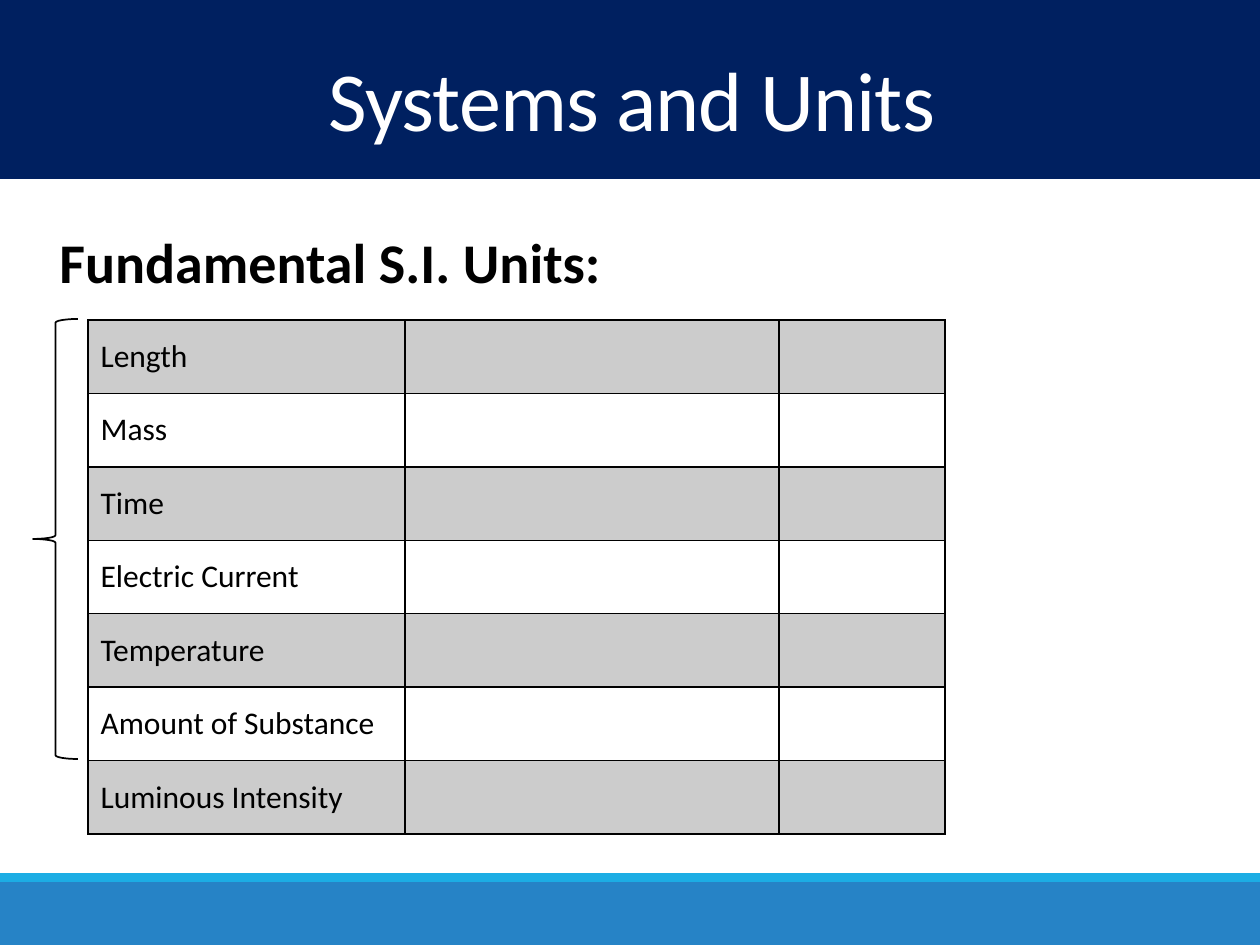
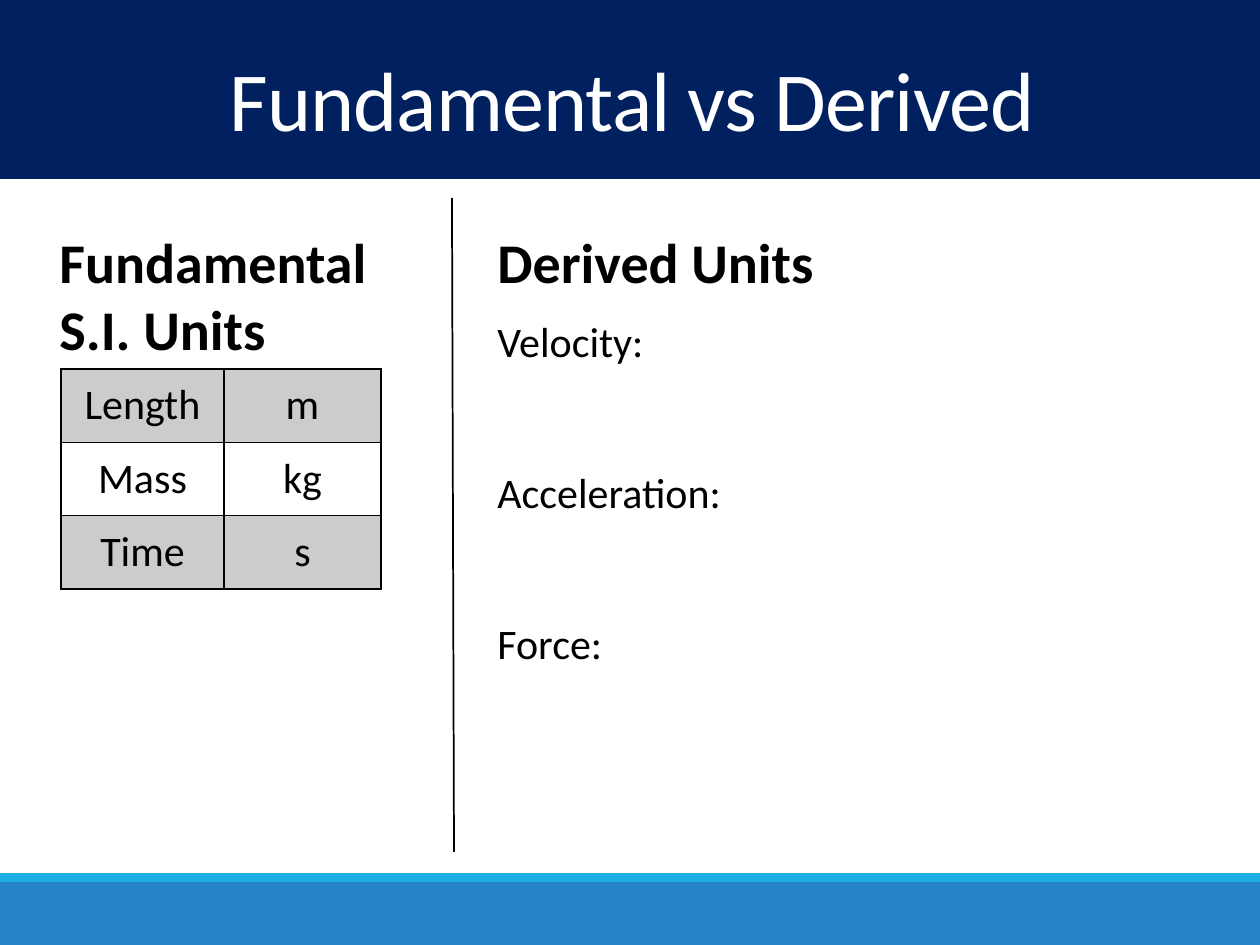
from collections import namedtuple
from dataclasses import dataclass
from itertools import product

from lxml import etree
from pptx import Presentation
from pptx.dml import color
from pptx.enum import shapes, text
from pptx.oxml import ns
from pptx import util as u

Box = namedtuple("Box", "left top width height")


@dataclass(frozen=True)
class Theme:
    font: str = "Calibri"
    navy: str = "002060"
    blue: str = "2683C6"
    sky: str = "1CADE4"
    white: str = "FFFFFF"
    ink: str = "000000"
    title_size: int = 48
    heading_size: int = 32
    body_size: int = 24
    label_size: int = 18
    stroke: int = 1
    shade_percent: int = 20


THEME = Theme()
PAGE = Box(0, 0, 1260, 945)


def px(length):
    return u.Emu(round(length * 914400 / 126))


def scaled(box):
    return [px(length) for length in box]


def rgb(value):
    return color.RGBColor.from_string(value)


def add_child(parent, tag, **attributes):
    return etree.SubElement(parent, ns.qn(tag), attributes)


def add_span(para, words, size, ink=THEME.ink, bold=False):
    span = para.add_run()
    span.text = words
    span.font.name = THEME.font
    span.font.size = u.Pt(size)
    span.font.bold = bold
    span.font.color.rgb = rgb(ink)
    return span


def add_frame(page, box, wrap=False):
    frame = page.shapes.add_textbox(*scaled(box)).text_frame
    frame.word_wrap = wrap
    return frame


def add_band(page, box, fill):
    band = page.shapes.add_shape(shapes.MSO_SHAPE.RECTANGLE, *scaled(box))
    band.shadow.inherit = False
    band.fill.solid()
    band.fill.fore_color.rgb = rgb(fill)
    band.line.fill.background()


def add_footer(page, box):
    strip = 9
    add_band(page, Box(box.left, box.top + strip, box.width, box.height - strip), THEME.blue)
    add_band(page, Box(box.left, box.top, box.width, strip), THEME.sky)


def add_header(page, box, title):
    add_band(page, box, THEME.navy)
    frame = add_frame(page, Box(box.left + 4, box.top + 53, box.width - 4, 106), wrap=True)
    frame.vertical_anchor = text.MSO_ANCHOR.MIDDLE
    para = frame.paragraphs[0]
    para.alignment = text.PP_ALIGN.CENTER
    para.line_spacing = 0.85
    span = add_span(para, title, THEME.title_size, THEME.white)
    span.font._element.set("spc", "-50")


def add_page(deck, title):
    page = deck.slides.add_slide(deck.slide_layouts[6])
    add_footer(page, Box(0, 873, PAGE.width, 72))
    add_header(page, Box(0, 0, PAGE.width, 179), title)
    return page


def add_heading(page, box, lines):
    frame = add_frame(page, box)
    for index, line in enumerate(lines):
        para = frame.add_paragraph() if index else frame.paragraphs[0]
        add_span(para, line, THEME.heading_size, bold=True)
    return frame


def style_cell(cell, shaded):
    properties = cell._tc.get_or_add_tcPr()
    for side in ("a:lnL", "a:lnR", "a:lnT", "a:lnB"):
        edge = add_child(properties, side, w=str(u.Pt(THEME.stroke)))
        add_child(add_child(edge, "a:solidFill"), "a:srgbClr", val=THEME.ink)
    if shaded:
        cell.fill.solid()
        cell.fill.fore_color.rgb = rgb(THEME.ink)
        tint = properties.find(".//" + ns.qn("a:solidFill") + "[last()]/..")
        tint = properties.find(ns.qn("a:solidFill"))[0]
        add_child(tint, "a:alpha", val=str(THEME.shade_percent * 1000))
    else:
        cell.fill.background()
    cell.vertical_anchor = text.MSO_ANCHOR.MIDDLE


def add_units_table(page, box, rows, widths, size, align):
    table = page.shapes.add_table(len(rows), len(widths), *scaled(box)).table
    table.first_row = table.horz_banding = False
    for column, width in zip(table.columns, widths):
        column.width = px(width)
    for row in table.rows:
        row.height = px(box.height / len(rows))
    for row, column in product(range(len(rows)), range(len(widths))):
        cell = table.cell(row, column)
        style_cell(cell, shaded=row % 2 == 0)
        if column < len(rows[row]):
            para = cell.text_frame.paragraphs[0]
            para.alignment = align
            add_span(para, rows[row][column], size)


def add_brace(page, box):
    brace = page.shapes.add_shape(shapes.MSO_SHAPE.LEFT_BRACE, *scaled(box))
    brace.shadow.inherit = False
    brace.fill.background()
    brace.line.color.rgb = rgb(THEME.ink)
    brace.line.width = u.Pt(THEME.stroke)


def add_divider(page, box):
    ends = scaled((box.left, box.top, box.left + box.width, box.top + box.height))
    divider = page.shapes.add_connector(shapes.MSO_CONNECTOR.STRAIGHT, *ends)
    divider.line.color.rgb = rgb(THEME.ink)
    divider.line.width = u.Pt(THEME.stroke)
    add_child(divider._element.spPr, "a:effectLst")


def add_derived_units(page, box, quantities):
    frame = add_heading(page, box, ["Derived Units"])
    frame.paragraphs[0].space_after = u.Pt(12)
    for index, quantity in enumerate(quantities):
        para = frame.add_paragraph()
        para.space_before = u.Pt(57.5 if index else 0)
        add_span(para, quantity, THEME.body_size)


def build_systems(deck):
    page = add_page(deck, "Systems and Units")
    quantities = ["Length", "Mass", "Time", "Electric Current", "Temperature",
                  "Amount of Substance", "Luminous Intensity"]
    add_units_table(page, Box(88, 320, 857, 514), [[name] for name in quantities],
                    [317, 374, 166], THEME.label_size, text.PP_ALIGN.LEFT)
    add_heading(page, Box(47, 221, 572, 81), ["Fundamental S.I. Units:"])
    add_brace(page, Box(33, 319, 45, 440))


def build_comparison(deck):
    page = add_page(deck, "Fundamental vs Derived")
    units = [("Length", "m"), ("Mass", "kg"), ("Time", "s")]
    add_units_table(page, Box(61, 369, 320, 220), units, [163, 157],
                    THEME.body_size, text.PP_ALIGN.CENTER)
    add_heading(page, Box(47, 221, 348, 149), ["Fundamental", "S.I. Units"])
    add_derived_units(page, Box(485, 221, 344, 559), ["Velocity:", "Acceleration:", "Force:"])
    add_divider(page, Box(452, 198, 2, 654))


def main():
    deck = Presentation()
    deck.slide_width, deck.slide_height = px(PAGE.width), px(PAGE.height)
    build_systems(deck)
    build_comparison(deck)
    deck.save("out.pptx")


if __name__ == "__main__":
    main()
